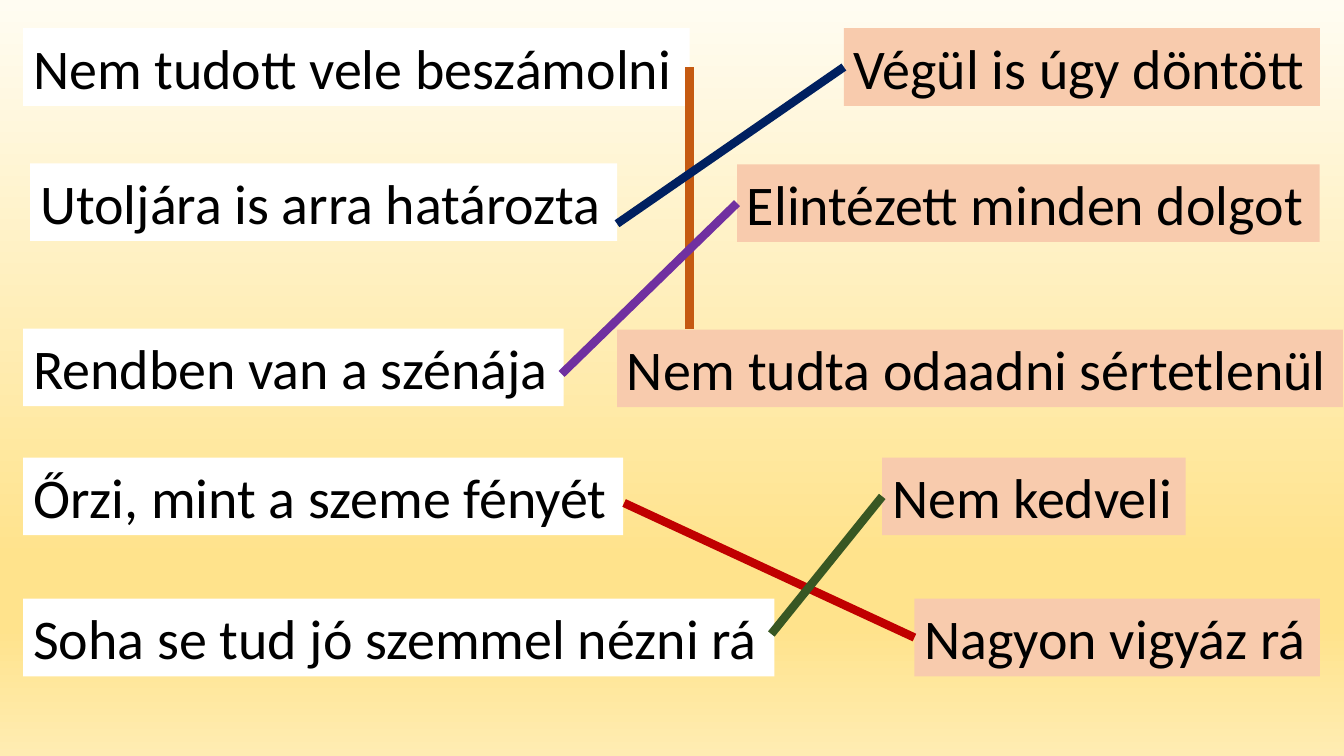
from lxml.etree import SubElement
from pptx import Presentation
from pptx.dml.color import RGBColor
from pptx.enum.shapes import MSO_CONNECTOR
from pptx.enum.text import MSO_AUTO_SIZE
from pptx.oxml.ns import qn
from pptx.util import Inches, Pt

COLORS = {
    "idiom": "FFFFFF", "meaning": "F8CBAD", "text": "000000",
    "brown": "C55A11", "navy": "002060", "purple": "7030A0",
    "red": "C00000", "green": "385723",
}
BACKGROUND_STOPS = [(0, "FFFCF2"), (74, "FFE38C"), (83, "FFE38C"), (100, "FFECB2")]
PHRASE_HEIGHT = 0.77
TOP, RIGHT, LEFT = 0, 3, 1

# text, left, top, width
IDIOMS = [
    ("Nem tudott vele beszámolni", 0.23, 0.28, 6.61),
    ("Utoljára is arra határozta", 0.3, 1.62, 5.82),
    ("Rendben van a szénája", 0.23, 3.26, 5.36),
    ("Őrzi, mint a szeme fényét", 0.23, 4.54, 5.95),
    ("Soha se tud jó szemmel nézni rá", 0.23, 5.94, 7.45),
]
MEANINGS = [
    ("Végül is úgy döntött", 8.37, 0.28, 4.72),
    ("Elintézett minden dolgot", 7.31, 1.63, 5.78),
    ("Nem tudta odaadni sértetlenül", 6.12, 3.27, 7.2),
    ("Nem kedveli", 8.75, 4.54, 3.01),
    ("Nagyon vigyáz rá", 9.07, 5.94, 4.02),
]
# joined phrase, side, free end, color
MATCHES = [
    ("Nem tudott vele beszámolni", RIGHT, (6.84, 3.26), "brown"),
    ("Végül is úgy döntött", LEFT, (6.12, 2.22), "navy"),
    ("Elintézett minden dolgot", LEFT, (5.57, 3.71), "purple"),
    ("Nagyon vigyáz rá", LEFT, (6.19, 4.99), "red"),
    ("Nem kedveli", LEFT, (7.65, 6.29), "green"),
]


def rgb(name):
    """Return the named color."""
    return RGBColor.from_string(COLORS[name])


def paint_background(slide):
    """Fill the slide with the vertical gradient."""
    fill = slide.background.fill
    fill.gradient()
    fill.gradient_angle = 270
    stops = next(slide.element.iter(qn("a:gsLst")))
    for stop in list(stops):
        stops.remove(stop)
    for percent, color in BACKGROUND_STOPS:
        stop = SubElement(stops, qn("a:gs"), pos=str(percent * 1000))
        SubElement(stop, qn("a:srgbClr"), val=color)


def add_phrase(slide, text, left, top, width, role):
    """Add one filled phrase box."""
    phrase = slide.shapes.add_textbox(
        Inches(left), Inches(top), Inches(width), Inches(PHRASE_HEIGHT))
    phrase.fill.solid()
    phrase.fill.fore_color.rgb = rgb(role)
    frame = phrase.text_frame
    frame.word_wrap = False
    frame.auto_size = MSO_AUTO_SIZE.SHAPE_TO_FIT_TEXT
    run = frame.paragraphs[0].add_run()
    run.text = text
    run.font.name = "Calibri"
    run.font.size = Pt(40)
    run.font.color.rgb = rgb("text")
    return phrase


def add_match(slide, phrase, side, free_end, color):
    """Draw a line from a phrase's side to a free end."""
    x, y = map(Inches, free_end)
    match = slide.shapes.add_connector(MSO_CONNECTOR.STRAIGHT, x, y, x, y)
    match.begin_connect(phrase, side)
    match.line.color.rgb = rgb(color)
    match.line.width = Pt(6)
    SubElement(match.element.spPr, qn("a:effectLst"))


def main():
    """Build the matching exercise slide."""
    deck = Presentation()
    deck.slide_width, deck.slide_height = Inches(13.33), Inches(7.5)
    slide = deck.slides.add_slide(deck.slide_layouts[6])
    paint_background(slide)
    phrases = {}
    for role, column in (("idiom", IDIOMS), ("meaning", MEANINGS)):
        for text, left, top, width in column:
            phrases[text] = add_phrase(slide, text, left, top, width, role)
    for text, side, free_end, color in MATCHES:
        add_match(slide, phrases[text], side, free_end, color)
    deck.save("out.pptx")


if __name__ == "__main__":
    main()
